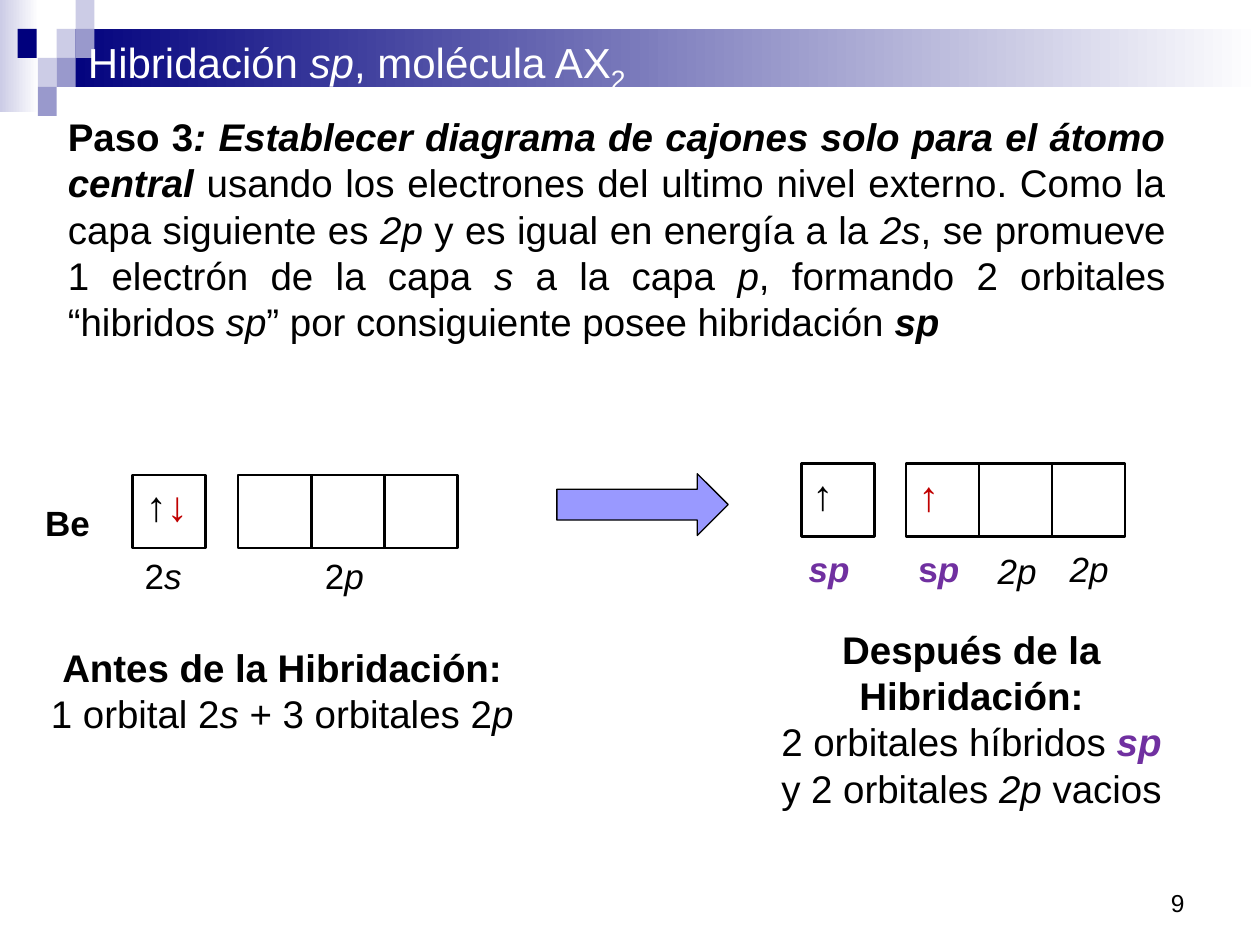
from dataclasses import dataclass

from pptx import Presentation
from pptx.dml.color import RGBColor
from pptx.enum.shapes import MSO_SHAPE
from pptx.enum.text import MSO_AUTO_SIZE, PP_ALIGN
from pptx.util import Inches, Pt

RECTANGLE = MSO_SHAPE.RECTANGLE
RIGHT_ARROW = MSO_SHAPE.RIGHT_ARROW
FIT_SHAPE = MSO_AUTO_SIZE.SHAPE_TO_FIT_TEXT
LEFT, CENTER, RIGHT, JUSTIFY = PP_ALIGN.LEFT, PP_ALIGN.CENTER, PP_ALIGN.RIGHT, PP_ALIGN.JUSTIFY


@dataclass(frozen=True)
class Theme:
    font: str = "Arial"
    white: str = "FFFFFF"
    black: str = "000000"
    navy: str = "00007D"
    lavender: str = "CCCCE6"
    periwinkle: str = "9999CC"
    arrow: str = "9999FF"
    purple: str = "7030A0"
    red: str = "C00000"
    title_size: int = 24
    subscript_size: int = 26
    body_size: int = 22
    label_size: int = 20
    number_size: int = 14


THEME = Theme()
BOLD = {"bold": True}
ITALIC = {"italic": True}
BOLD_ITALIC = {**BOLD, **ITALIC}
HYBRID = {**BOLD_ITALIC, "color": THEME.purple}
CELL = 0.58


class SlideBuilder:
    """Adds themed elements to the current slide."""

    def __init__(self, slide, theme):
        self.slide = slide
        self.theme = theme

    def shape(self, kind, box, fill=None, gradient=None, line_width=None):
        shape = self.slide.shapes.add_shape(kind, *map(Inches, box))
        shape.shadow.inherit = False
        if gradient:
            shape.fill.gradient()
            shape.fill.gradient_angle = 0
            for stop, color, position in zip(shape.fill.gradient_stops, gradient, (0, 1)):
                stop.color.rgb = RGBColor.from_string(color)
                stop.position = position
        elif fill:
            shape.fill.solid()
            shape.fill.fore_color.rgb = RGBColor.from_string(fill)
        else:
            shape.fill.background()
        if line_width:
            shape.line.color.rgb = RGBColor.from_string(self.theme.black)
            shape.line.width = Pt(line_width)
        else:
            shape.line.fill.background()

    def orbitals(self, left, top, count):
        for index in range(count):
            self.shape(RECTANGLE, (left + index * CELL, top, CELL, CELL), line_width=1.5)

    def text(self, box, paragraphs, size, align=LEFT, wrap=True, color=THEME.black):
        frame = self.slide.shapes.add_textbox(*map(Inches, box)).text_frame
        frame.word_wrap = wrap
        frame.auto_size = FIT_SHAPE
        for index, runs in enumerate(paragraphs):
            paragraph = frame.add_paragraph() if index else frame.paragraphs[0]
            paragraph.alignment = align
            for content, style in runs:
                self.run(paragraph, content, {"size": size, "color": color, **style})

    def run(self, paragraph, content, style):
        run = paragraph.add_run()
        run.text = content
        values = {"name": self.theme.font, "bold": False, "italic": False, **style}
        run.font.color.rgb = RGBColor.from_string(values.pop("color"))
        baseline = values.pop("baseline", None)
        if baseline:
            run.font._element.set("baseline", str(baseline))
        values["size"] = Pt(values["size"])
        for name, value in values.items():
            setattr(run.font, name, value)

    def label(self, box, *runs, size=THEME.label_size):
        self.text(box, [runs], size, wrap=False)


def add_header(builder):
    theme = builder.theme
    builder.shape(RECTANGLE, (0, 0, 0.31, 0.89), gradient=(theme.lavender, theme.white))
    builder.shape(RECTANGLE, (0.45, 0.23, 9.55, 0.46), gradient=(theme.navy, theme.white))
    for left, top, color in (
        (0.45, 0.23, theme.lavender),
        (0.6, 0, theme.lavender),
        (0.6, 0.23, theme.periwinkle),
        (0.3, 0.46, theme.lavender),
        (0.14, 0.23, theme.navy),
        (0.45, 0.46, theme.periwinkle),
        (0.3, 0.69, theme.periwinkle),
    ):
        builder.shape(RECTANGLE, (left, top, 0.15, 0.23), fill=color)
    title = [
        ("Hibridación ", {}),
        ("sp", ITALIC),
        (", molécula AX", {}),
        ("2", {"size": theme.subscript_size, "baseline": -25000}),
    ]
    builder.text((0.6, 0.21, 5.33, 0.5), [title], theme.title_size, color=theme.white)


def add_explanation(builder):
    explanation = [
        ("Paso 3", BOLD),
        (": Establecer diagrama de cajones solo para el átomo central ", BOLD_ITALIC),
        ("usando los electrones del ultimo nivel externo. Como la capa siguiente es ", {}),
        ("2p ", ITALIC),
        ("y es igual en energía a la ", {}),
        ("2s", ITALIC),
        (", se promueve 1 electrón de la capa ", {}),
        ("s", ITALIC),
        (" a la capa ", {}),
        ("p", ITALIC),
        (", formando 2 orbitales “hibridos ", {}),
        ("sp", ITALIC),
        ("” por consiguiente posee hibridación ", {}),
        ("sp", BOLD_ITALIC),
    ]
    builder.text((0.44, 0.85, 8.91, 1.95), [explanation], builder.theme.body_size, JUSTIFY)


def add_before(builder):
    theme = builder.theme
    builder.label((0.26, 3.93, 0.56, 0.44), ("Be", BOLD))
    builder.orbitals(1.05, 3.77, 1)
    builder.orbitals(1.89, 3.77, 3)
    builder.label((1.05, 4.35, 0.52, 0.43), ("2", {}), ("s", ITALIC))
    builder.label((2.48, 4.35, 0.52, 0.43), ("2", {}), ("p", ITALIC))
    builder.label((1.06, 3.76, 0.53, 0.5), ("↑", BOLD), ("↓", {**BOLD, "color": theme.red}),
                  size=theme.title_size)
    caption = [
        [("Antes de la Hibridación:", BOLD)],
        [("1 orbital 2", {}), ("s", ITALIC), (" + 3 orbitales 2", {}), ("p", ITALIC)],
    ]
    builder.text((0.26, 5.06, 3.96, 0.84), caption, theme.body_size, CENTER)


def add_after(builder):
    theme = builder.theme
    builder.orbitals(6.36, 3.68, 1)
    builder.orbitals(7.19, 3.68, 3)
    builder.label((6.32, 4.3, 0.53, 0.44), ("sp", HYBRID))
    builder.label((7.19, 4.3, 0.53, 0.44), ("s", {**HYBRID, "italic": False}), ("p", HYBRID))
    for left, top in ((7.82, 4.31), (8.39, 4.3)):
        builder.label((left, top, 0.52, 0.44), ("2p", ITALIC))
    for left, top, color in ((6.35, 3.67, theme.black), (7.19, 3.68, theme.red)):
        builder.label((left, top, 0.37, 0.5), ("↑", {**BOLD, "color": color}),
                      size=theme.title_size)
    caption = [
        [("Después de la Hibridación:", BOLD)],
        [("2 orbitales híbridos ", {}), ("sp", HYBRID), (" y 2 orbitales ", {}),
         ("2p ", ITALIC), ("vacios", {})],
    ]
    builder.text((6.08, 4.92, 3.26, 1.58), caption, theme.body_size, CENTER)


def main():
    presentation = Presentation()
    presentation.slide_width = Inches(10)
    presentation.slide_height = Inches(7.5)
    builder = SlideBuilder(presentation.slides.add_slide(presentation.slide_layouts[6]), THEME)
    add_header(builder)
    add_explanation(builder)
    add_before(builder)
    add_after(builder)
    builder.shape(RIGHT_ARROW, (4.42, 3.76, 1.36, 0.49), fill=THEME.arrow, line_width=0.75)
    builder.text((7.17, 7, 2.33, 0.35), [[("9", {})]], THEME.number_size, RIGHT)
    presentation.save("out.pptx")


if __name__ == "__main__":
    main()
